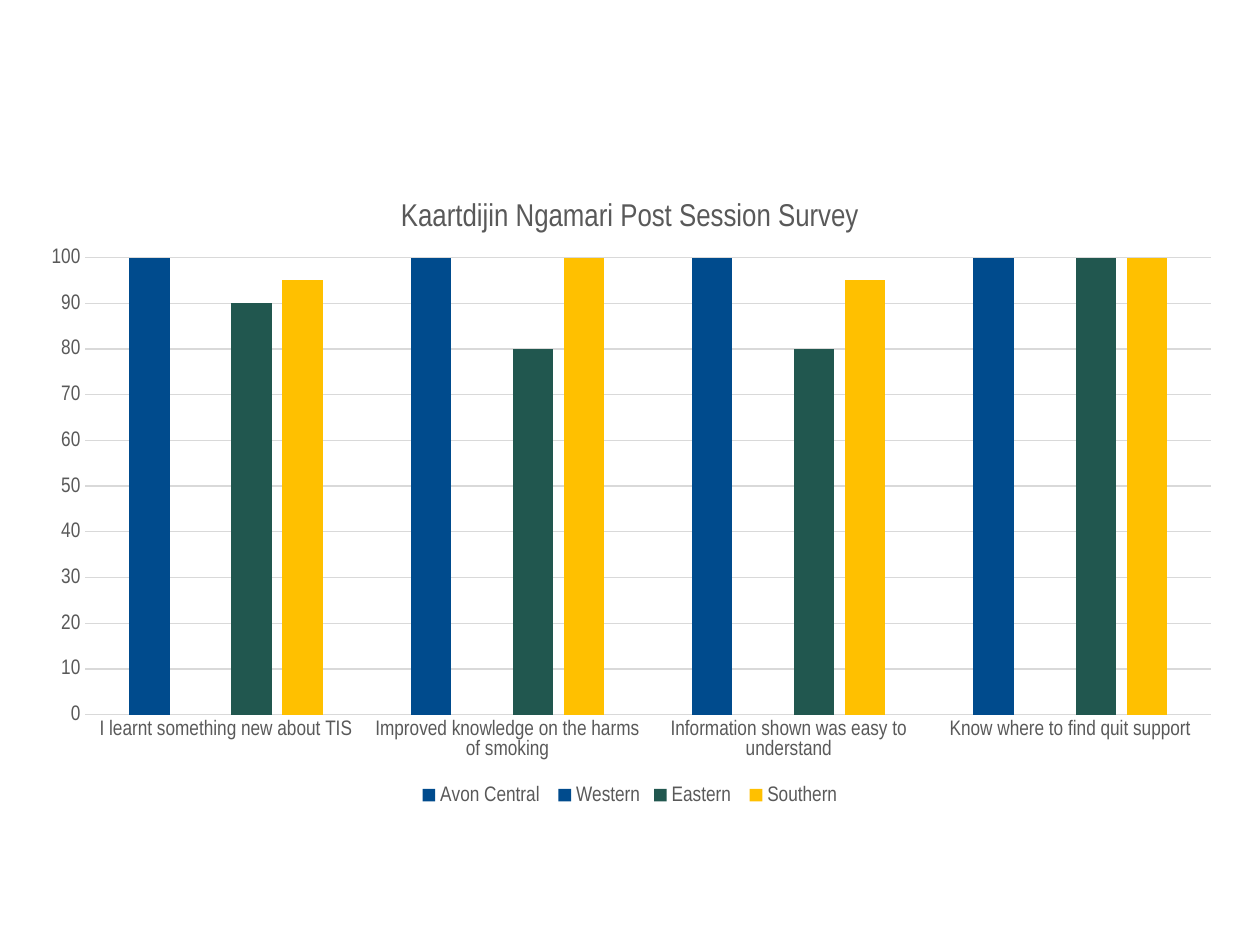
from dataclasses import dataclass
from typing import Any, Optional

import lxml.etree
import pptx
import pptx.chart.data
import pptx.dml.color
import pptx.enum.chart
import pptx.oxml
import pptx.oxml.ns
import pptx.util

Cm = pptx.util.Cm
Pt = pptx.util.Pt


@dataclass(frozen=True)
class Theme:
    face: str = "Arial Narrow"
    text: str = "595959"
    grid: str = "D9D9D9"
    blue: str = "004B8D"
    green: str = "21574F"
    gold: str = "FFC000"
    title: float = 18
    label: float = 12
    rule: float = 0.75


@dataclass(frozen=True)
class Region:
    name: str
    color: str
    scores: tuple[Optional[int], ...]


THEME = Theme()

TOPICS = (
    "I learnt something new about TIS",
    "Improved knowledge on the harms of smoking",
    "Information shown was easy to understand",
    "Know where to find quit support",
)

REGIONS = (
    Region("Avon Central ", THEME.blue, (100, 100, 100, 100)),
    Region("Western", THEME.blue, (None, None, None, None)),
    Region("Eastern ", THEME.green, (90, 80, 80, 100)),
    Region("Southern", THEME.gold, (95, 100, 95, 100)),
)


def rgb(code: str) -> pptx.dml.color.RGBColor:
    return pptx.dml.color.RGBColor.from_string(code)


def style(font: Any, size: float = THEME.label, color: str = THEME.text) -> None:
    font.name = THEME.face
    font.size = Pt(size)
    font.bold = False
    font.color.rgb = rgb(color)


def write(frame: Any, text: str, **form: Any) -> None:
    frame.text = text
    style(frame.paragraphs[0].runs[0].font, **form)


def rule(line: Any) -> None:
    line.color.rgb = rgb(THEME.grid)
    line.width = Pt(THEME.rule)


def place(chart: Any, **box: float) -> None:
    """Fix the inner plot area, as shares of the chart frame."""
    area = chart.plots[0]._element.getparent()
    for old in area.findall(pptx.oxml.ns.qn("c:layout")):
        area.remove(old)
    layout = lxml.etree.Element(pptx.oxml.ns.qn("c:layout"))
    manual = lxml.etree.SubElement(layout, pptx.oxml.ns.qn("c:manualLayout"))
    parts = {"layoutTarget": "inner", "xMode": "edge", "yMode": "edge", **box}
    for tag, val in parts.items():
        lxml.etree.SubElement(manual, pptx.oxml.ns.qn(f"c:{tag}"), val=str(val))
    area.insert(0, layout)


def draw(slide: Any) -> Any:
    data = pptx.chart.data.CategoryChartData()
    data.categories = TOPICS
    for region in REGIONS:
        data.add_series(region.name, region.scores)
    kind = pptx.enum.chart.XL_CHART_TYPE.COLUMN_CLUSTERED
    return slide.shapes.add_chart(
        kind, Cm(0.5), Cm(3.53), Cm(24.4), Cm(12.8), data
    ).chart


def main() -> None:
    deck = pptx.Presentation()
    deck.slide_width, deck.slide_height = Cm(25.4), Cm(19.05)
    slide = deck.slides.add_slide(deck.slide_layouts[6])

    # Chart and its title
    chart = draw(slide)
    style(chart.font)
    chart.has_title = True
    write(chart.chart_title.text_frame, "Kaartdijin Ngamari Post Session Survey",
          size=THEME.title)
    chart.chart_title.include_in_layout = False
    place(chart, x=0.05, y=0.13, w=0.93, h=0.72)

    # Columns
    plot = chart.plots[0]
    plot.gap_width, plot.overlap = 219, -27
    plot.vary_by_categories = False
    for series, region in zip(plot.series, REGIONS):
        series.format.fill.solid()
        series.format.fill.fore_color.rgb = rgb(region.color)
        series.invert_if_negative = False

    # Axes
    topics, scores = chart.category_axis, chart.value_axis
    for axis in (topics, scores):
        axis.major_tick_mark = pptx.enum.chart.XL_TICK_MARK.NONE
        axis.minor_tick_mark = pptx.enum.chart.XL_TICK_MARK.NONE
        style(axis.tick_labels.font)
    rule(topics.format.line)
    scores.format.line.fill.background()
    scores.minimum_scale, scores.maximum_scale = 0, 100
    scores.major_unit = 10
    scores.has_major_gridlines = True
    rule(scores.major_gridlines.format.line)

    # Legend
    chart.has_legend = True
    chart.legend.position = pptx.enum.chart.XL_LEGEND_POSITION.BOTTOM
    chart.legend.include_in_layout = False
    style(chart.legend.font)

    deck.save("out.pptx")


if __name__ == "__main__":
    main()
